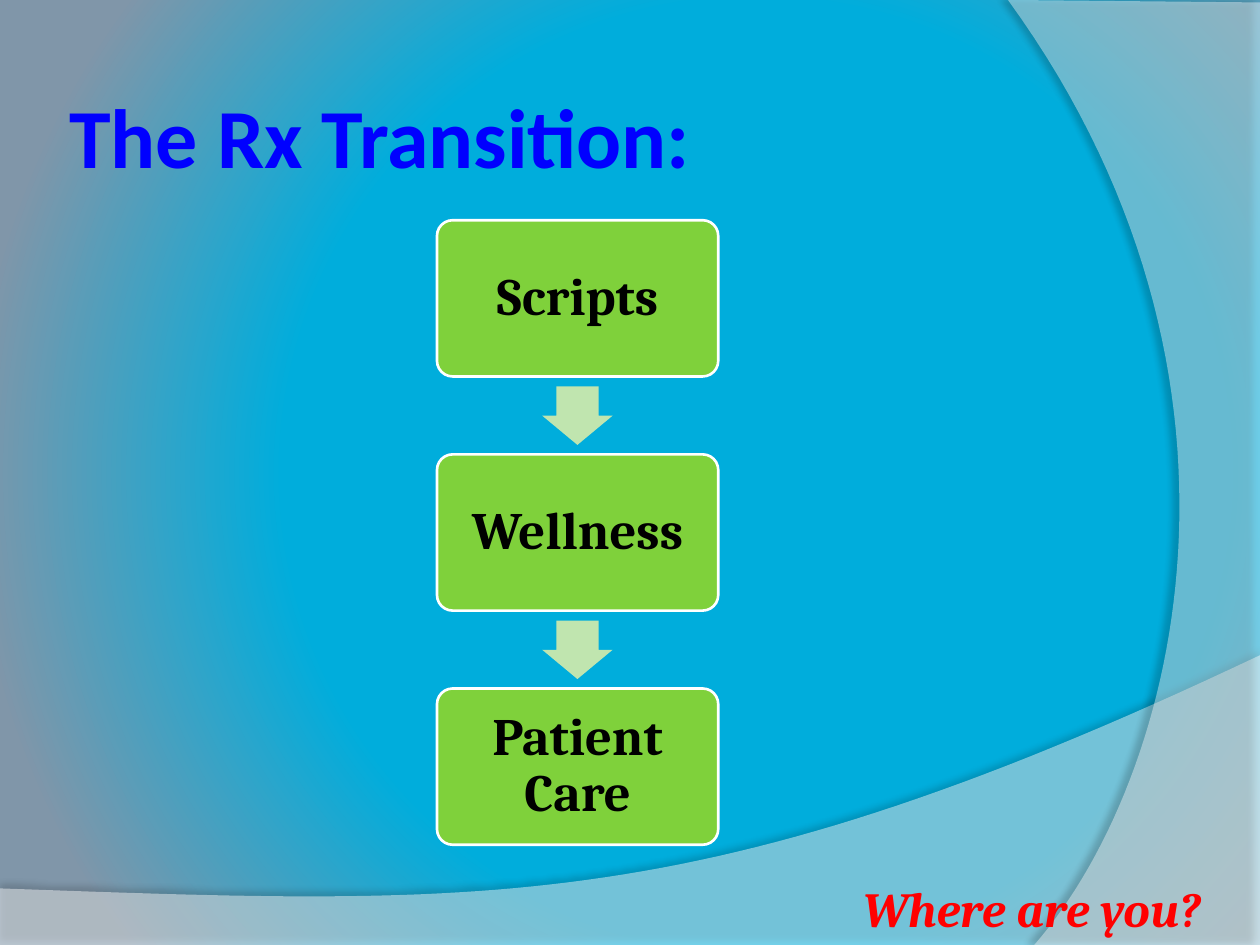
"""Build the Rx transition slide with its three-step flow."""
from lxml.etree import SubElement
from pptx import Presentation
from pptx.dml.color import RGBColor
from pptx.enum.shapes import MSO_SHAPE
from pptx.enum.text import MSO_ANCHOR, PP_ALIGN
from pptx.oxml import parse_xml
from pptx.oxml.ns import qn
from pptx.util import Cm, Pt

NS = 'xmlns:a="http://schemas.openxmlformats.org/drawingml/2006/main"'


def color(hex_code):
    return RGBColor.from_string(hex_code)


def write(shape, text, size, font_name, hex_code, inset, italic=False):
    frame = shape.text_frame
    frame.word_wrap = True
    frame.margin_left = frame.margin_right = Cm(inset)
    frame.margin_top = frame.margin_bottom = Cm(inset / 2 if italic else inset)
    frame.text = text
    font = frame.paragraphs[0].runs[0].font
    font.size, font.name = Pt(size), font_name
    font.bold, font.italic = True, italic
    font.color.rgb = color(hex_code)
    return frame


presentation = Presentation()
presentation.slide_width, presentation.slide_height = Cm(25.4), Cm(19.05)
slide = presentation.slides.add_slide(presentation.slide_layouts[6])
shapes = slide.shapes

backdrop = slide.background.fill
backdrop.gradient()
for stop, position, hex_code in zip(backdrop.gradient_stops, (0.6, 1), ("00ADDC", "8096A9")):
    stop.position = position
    stop.color.rgb = color(hex_code)
linear = next(slide.element.iter(qn("a:lin")))
linear.getparent().replace(linear, parse_xml(
    f'<a:path {NS} path="circle"><a:fillToRect l="60000" t="50000" r="40000" b="50000"/></a:path>'))

# (corners, curve points from the last corner, opacity, shadow opacity, distance, angle)
swooshes = [
    ([(0, 17.91), (0, 19.08), (25.4, 19.08), (25.4, 13.21)],
     [(14.2, 18.52), (9.93, 18.26), (0, 17.91)], 45, 35, 3.5, 270),
    ([(25.4, 0.05), (25.4, 19.05), (20.85, 19.05)],
     [(23.75, 15.72), (25.86, 7.62), (20.32, 0)], 40, 45, 4, 180),
]
STEPS = 60
for corners, bend, opacity, shade, distance, angle in swooshes:
    controls = [corners[-1], *bend]
    curve = []
    for step in range(1, STEPS + 1):
        t = step / STEPS
        weights = ((1 - t) ** 3, 3 * t * (1 - t) ** 2, 3 * t * t * (1 - t), t ** 3)
        curve.append([sum(w * p[axis] for w, p in zip(weights, controls)) for axis in (0, 1)])
    outline = [(Cm(x), Cm(y)) for x, y in corners + curve]
    builder = shapes.build_freeform(*outline[0])
    builder.add_line_segments(outline[1:], close=True)
    swoosh = builder.convert_to_shape()
    swoosh.fill.solid()
    swoosh.fill.fore_color.rgb = color("FFFFFF")
    white = swoosh.element.spPr.find(qn("a:solidFill"))[0]
    SubElement(white, qn("a:alpha"), val=str(opacity * 1000))
    swoosh.line.fill.background()
    swoosh.element.spPr.append(parse_xml(
        f'<a:effectLst {NS}><a:outerShdw blurRad="{Pt(4)}" dist="{Pt(distance)}" '
        f'dir="{angle * 60000}" algn="ctr" rotWithShape="0"><a:srgbClr val="000000">'
        f'<a:alpha val="{shade * 1000}"/></a:srgbClr></a:outerShdw></a:effectLst>'))

title = shapes.add_textbox(Cm(1.27), Cm(0.76), Cm(20.75), Cm(3.94))
write(title, "The Rx Transition:", 48, "Calibri", "0000FF", 0.13).vertical_anchor = MSO_ANCHOR.MIDDLE

stages = ["Scripts", "Wellness", "Patient Care"]
PITCH = 4.72
for index, stage in enumerate(stages):
    top = 4.44 + index * PITCH
    box = shapes.add_shape(MSO_SHAPE.ROUNDED_RECTANGLE, Cm(8.81), Cm(top), Cm(5.67), Cm(3.15))
    box.adjustments[0] = 0.1
    box.shadow.inherit = False
    box.fill.solid()
    box.fill.fore_color.rgb = color("7FD13B")
    box.line.color.rgb = color("FFFFFF")
    box.line.width = Pt(1.5)
    label = write(box, stage, 30, "Cambria", "000000", 0.4)
    label.vertical_anchor = MSO_ANCHOR.MIDDLE
    label.paragraphs[0].alignment = PP_ALIGN.CENTER
    label.paragraphs[0].line_spacing = 0.9
    if index < len(stages) - 1:
        arrow = shapes.add_shape(MSO_SHAPE.RIGHT_ARROW, Cm(11.05), Cm(top + 3.23), Cm(1.18), Cm(1.42))
        arrow.rotation = 90
        arrow.adjustments[0], arrow.adjustments[1] = 0.6, 0.5
        arrow.shadow.inherit = False
        arrow.fill.solid()
        arrow.fill.fore_color.rgb = color("C0E5AF")
        arrow.line.fill.background()

question = shapes.add_textbox(Cm(17.15), Cm(17.58), Cm(7.62), Cm(1.45))
write(question, "Where are you?", 28, "Cambria", "FF0000", 0.25, italic=True)

presentation.save("out.pptx")
